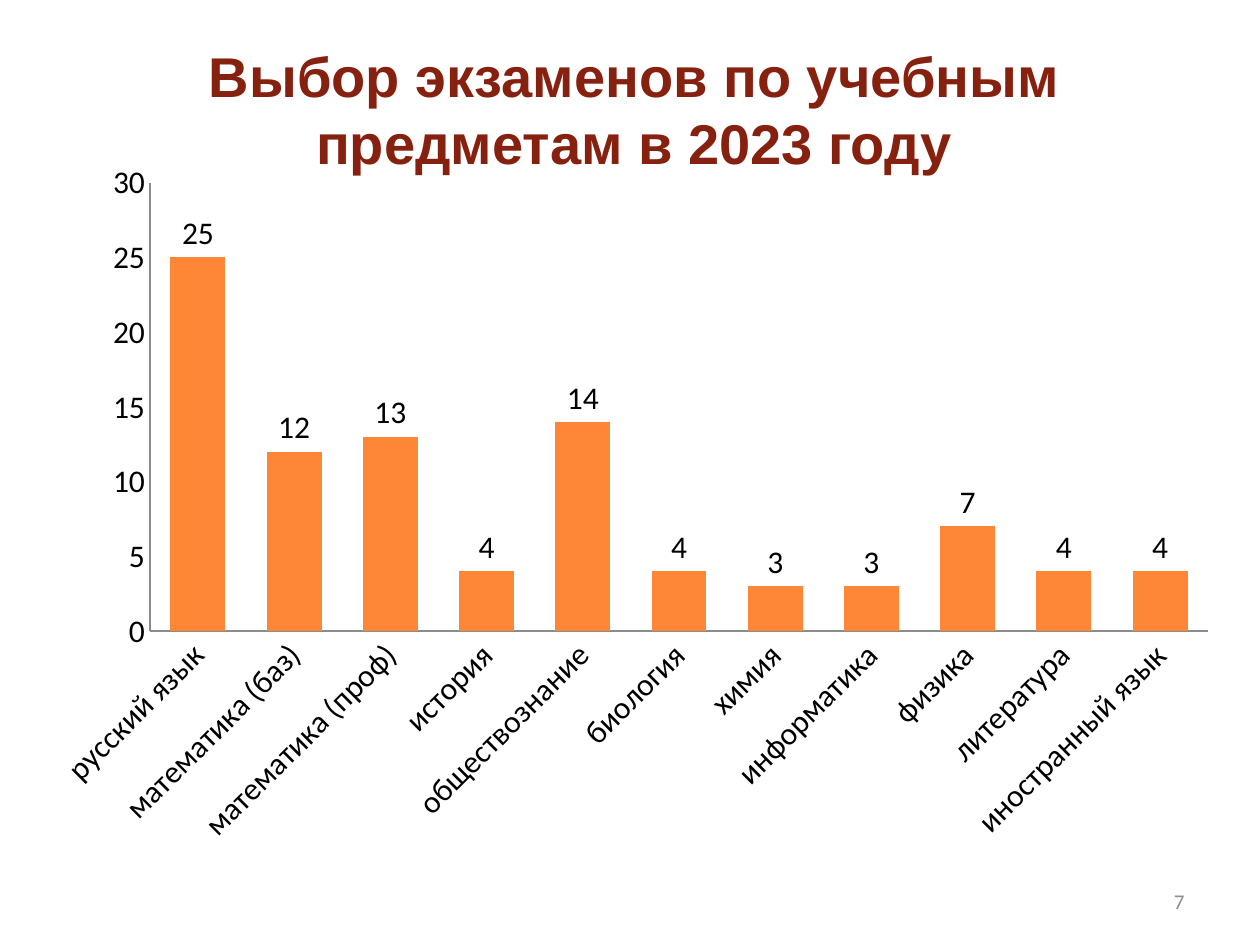
from dataclasses import dataclass

from lxml import etree
from pptx import Presentation
from pptx import util as u
from pptx.chart.data import CategoryChartData
from pptx.dml.color import RGBColor
from pptx.enum import chart as ch, text
from pptx.oxml.ns import qn

BROWN = RGBColor(0x86, 0x21, 0x10)
ORANGE = RGBColor(0xFE, 0x86, 0x37)
GRAY = RGBColor(0x8C, 0x8C, 0x8C)
BLACK = RGBColor(0, 0, 0)

COLS, ROWS = 100, 75
CELL = u.Inches(0.1)


@dataclass
class Box:
    col: float
    row: float
    wide: float
    high: float

    def spot(self) -> list:
        return [u.Emu(round(n * CELL)) for n in (self.col, self.row, self.wide, self.high)]


@dataclass
class Label:
    words: str
    font: str
    size: int
    color: RGBColor
    align: text.PP_ALIGN
    bold: bool = False


HEAD = Box(8.3, 5.4, 84.1, 6.4)
GRAPH = Box(2.8, 11.9, 94.9, 56.3)
PLOT = Box(11.9, 14.5, 84, 35.6)
PAGE = Box(71.7, 69.5, 23.3, 4)

EXAMS = {
    "русский язык": 25,
    "математика (баз)": 12,
    "математика (проф)": 13,
    "история": 4,
    "обществознание": 14,
    "биология": 4,
    "химия": 3,
    "информатика": 3,
    "физика": 7,
    "литература": 4,
    "иностранный язык": 4,
}


def write(shape, box: Box, label: Label) -> None:
    shape.left, shape.top, shape.width, shape.height = box.spot()
    frame = shape.text_frame
    frame.word_wrap = True
    frame.auto_size = text.MSO_AUTO_SIZE.NONE
    frame.vertical_anchor = text.MSO_ANCHOR.MIDDLE
    para = frame.paragraphs[0]
    para.alignment = label.align
    run = para.add_run()
    run.text = label.words
    font = run.font
    font.name, font.size, font.bold = label.font, u.Pt(label.size), label.bold
    font.color.rgb = label.color


def place(chart, area: Box, plot: Box) -> None:
    zone = chart._chartSpace.find(".//" + qn("c:plotArea"))
    for old in zone.findall(qn("c:layout")):
        zone.remove(old)
    layout = etree.Element(qn("c:layout"))
    manual = etree.SubElement(layout, qn("c:manualLayout"))
    parts = {
        "layoutTarget": "inner",
        "xMode": "edge",
        "yMode": "edge",
        "x": (plot.col - area.col) / area.wide,
        "y": (plot.row - area.row) / area.high,
        "w": plot.wide / area.wide,
        "h": plot.high / area.high,
    }
    for tag, value in parts.items():
        etree.SubElement(manual, qn("c:" + tag)).set("val", str(value))
    zone.insert(0, layout)


def style(axis) -> None:
    axis.has_major_gridlines = False
    axis.major_tick_mark = axis.minor_tick_mark = ch.XL_TICK_MARK.NONE
    axis.format.line.color.rgb = GRAY
    axis.format.line.width = u.Pt(0.75)
    axis.tick_labels.font.size = u.Pt(18)


def draw(slide, box: Box) -> None:
    data = CategoryChartData()
    data.categories = list(EXAMS)
    data.add_series("Series 1", list(EXAMS.values()))
    chart = slide.shapes.add_chart(ch.XL_CHART_TYPE.COLUMN_CLUSTERED, *box.spot(), data).chart
    chart.has_legend = chart.has_title = False
    chart.font.name, chart.font.size = "Calibri", u.Pt(18)
    chart.font.color.rgb = BLACK
    style(chart.category_axis)
    style(chart.value_axis)
    body = chart.category_axis._element.find(qn("c:txPr")).find(qn("a:bodyPr"))
    body.set("rot", str(-45 * 60000))
    scale = chart.value_axis
    scale.minimum_scale, scale.maximum_scale, scale.major_unit = 0, 30, 5
    bars = chart.plots[0]
    bars.gap_width, bars.vary_by_categories = 75, False
    fill = bars.series[0].format.fill
    fill.solid()
    fill.fore_color.rgb = ORANGE
    bars.has_data_labels = True
    bars.data_labels.show_value = True
    bars.data_labels.position = ch.XL_LABEL_POSITION.OUTSIDE_END
    place(chart, box, PLOT)


def main() -> None:
    deck = Presentation()
    deck.slide_width, deck.slide_height = COLS * CELL, ROWS * CELL
    slide = deck.slides.add_slide(deck.slide_layouts[5])
    align = text.PP_ALIGN
    title = Label("Выбор экзаменов по учебным предметам в 2023 году",
                  "Arial", 32, BROWN, align.CENTER, True)
    write(slide.shapes.title, HEAD, title)
    page = slide.shapes.add_textbox(*PAGE.spot())
    write(page, PAGE, Label("7", "Calibri", 12, GRAY, align.RIGHT))
    draw(slide, GRAPH)
    deck.save("out.pptx")


if __name__ == "__main__":
    main()
